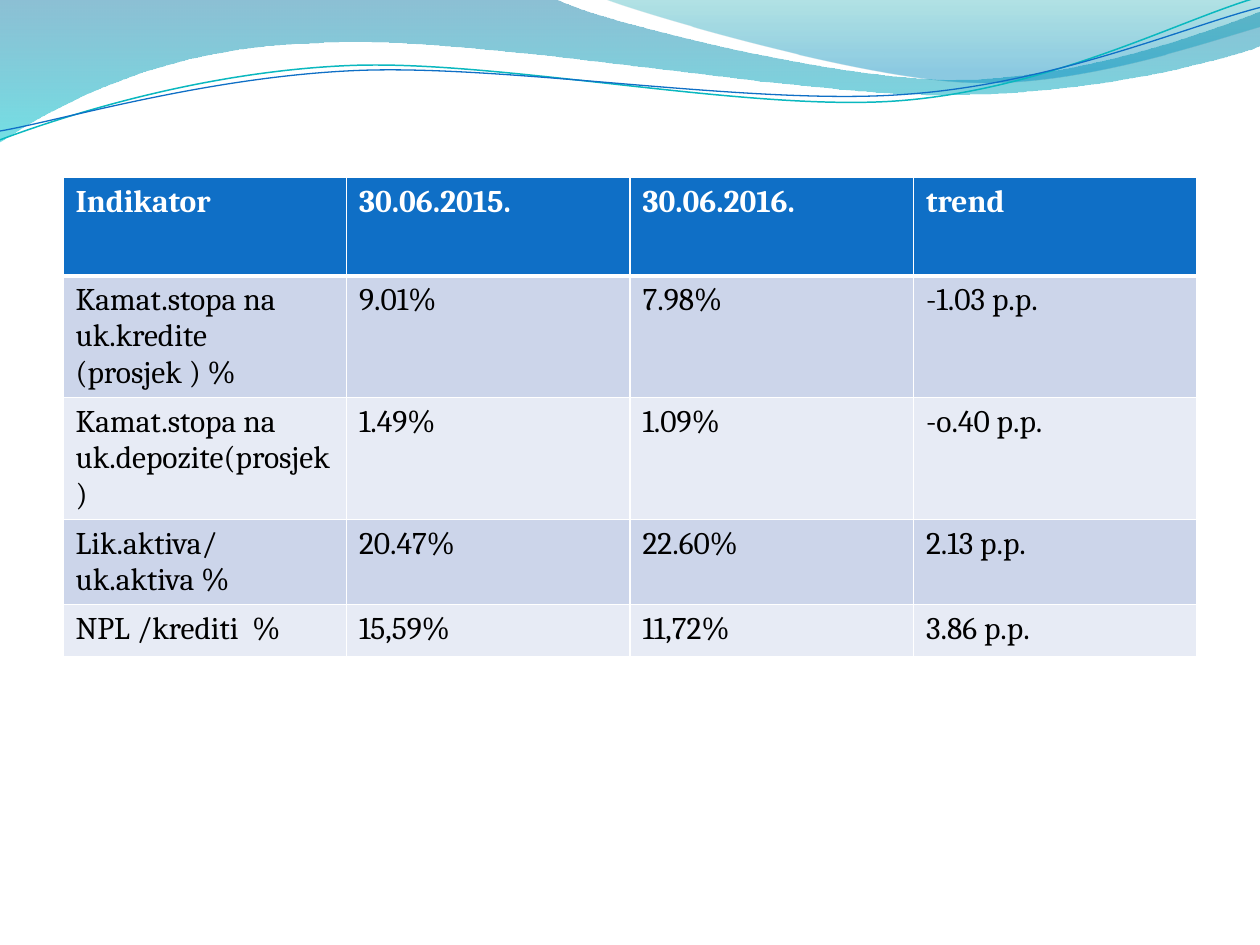
from math import cos, radians, sin

from lxml.etree import SubElement as Sub
from pptx import Presentation as Deck
from pptx.dml.color import RGBColor as RGB
from pptx.oxml.ns import qn
from pptx.util import Inches, Pt

WHITE = RGB(0xFF, 0xFF, 0xFF)
BLACK = RGB(0x00, 0x00, 0x00)
BLUE = RGB(0x0F, 0x6F, 0xC6)
TEAL = RGB(0x0A, 0xB8, 0xBF)
DEEP = RGB(0x00, 0x74, 0xA1)
AQUA = RGB(0x00, 0xC6, 0xCF)
GREEN = RGB(0x00, 0xA1, 0xA9)
SKY = RGB(0x00, 0x8B, 0xBF)
BANDS = RGB(0xCC, 0xD5, 0xEA), RGB(0xE7, 0xEB, 0xF5)

ROWS = [
    ("Indikator", "30.06.2015.", "30.06.2016.", "trend"),
    ("Kamat.stopa na uk.kredite (prosjek ) %", "9.01%", "7.98%", "-1.03 p.p."),
    ("Kamat.stopa na uk.depozite(prosjek)", "1.49%", "1.09%", "-o.40 p.p."),
    ("Lik.aktiva/uk.aktiva %", "20.47%", "22.60%", "2.13 p.p."),
    ("NPL /krediti  %", "15,59%", "11,72%", "3.86 p.p."),
]

WAVE = [
    (0, 0), (4.4, -0.01),
    (4.76, 0.17, 6.64, 0.63, 7.58, 0.63),
    (8.53, 0.63, 9.58, 0.26, 10, 0.09), (10.01, 0.36),
    (9.83, 0.44, 8.7, 0.76, 7.46, 0.75),
    (6.22, 0.75, 3.82, 0.28, 2.57, 0.34),
    (1.29, 0.36, 0.46, 0.83, -0.01, 1.13), (0, 0),
]
CREST = [
    (4.79, -0.01),
    (5.09, 0.11, 6.82, 0.62, 7.69, 0.65),
    (8.56, 0.69, 9.61, 0.32, 10, 0.21), (10, 0), (4.79, -0.01),
]
UPPER = [
    (0, 1.11),
    (0.48, 0.93, 1.58, 0.57, 2.77, 0.52),
    (3.95, 0.47, 5.93, 0.89, 7.13, 0.8),
    (8.33, 0.71, 9.38, 0.15, 9.98, -0.02),
]
LOWER = [
    (0, 1.04),
    (0.47, 0.96, 1.64, 0.61, 2.83, 0.56),
    (4.03, 0.51, 5.97, 0.84, 7.17, 0.75),
    (8.36, 0.67, 9.41, 0.21, 10, 0.06),
]
TILT = 2.7


def pairs(step):
    return list(zip(step[::2], step[1::2]))


def turn(step, mid):
    a = radians(TILT)
    spots = []
    for x, y in pairs(step):
        dx, dy = x - mid[0], y - mid[1]
        spots += [mid[0] + dx * cos(a) - dy * sin(a),
                  mid[1] + dx * sin(a) + dy * cos(a)]
    return tuple(spots)


class Page:
    text = {"name": "Cambria", "size": Pt(18)}

    def __init__(self, slide):
        self.slide = slide

    def outline(self, steps, close):
        first, *rest = [(Inches(x), Inches(y))
                        for step in steps for x, y in pairs(step)]
        pen = self.slide.shapes.build_freeform(*first, scale=1.0)
        pen.add_line_segments(rest, close=close)
        shape = pen.convert_to_shape()
        shape.shadow.inherit = False
        lines = iter(list(shape._element.iter(qn("a:lnTo"))))
        for step in steps[1:]:
            line = next(lines)
            if len(step) == 6:
                line.addprevious(bend := line.makeelement(qn("a:cubicBezTo")))
                for part in (line, next(lines), next(lines)):
                    bend.append(part[0])
                    part.getparent().remove(part)
        return shape

    def wash(self, steps, stops):
        shape = self.outline(steps, True)
        shape.line.fill.background()
        shape.fill.gradient()
        shape.fill.gradient_angle = 270
        for stop, (place, tint, alpha) in zip(shape.fill.gradient_stops, stops):
            stop.position = place
            stop.color.rgb = tint
        tints = list(shape._element.spPr.iter(qn("a:srgbClr")))
        for node, (place, tint, alpha) in zip(tints, stops):
            Sub(node, qn("a:alpha"), val=str(alpha * 1000))

    def curve(self, steps, mid, tint, width):
        shape = self.outline([turn(step, mid) for step in steps], False)
        shape.rotation = -TILT
        shape.fill.background()
        shape.line.color.rgb = tint
        shape.line.width = Pt(width)

    def border(self, cell):
        props = cell._tc.get_or_add_tcPr()
        for side, width in zip("LRTB", (1, 1, 1, 3)):
            line = Sub(props, qn(f"a:ln{side}"), w=str(Pt(width)))
            fill = Sub(line, qn("a:solidFill"))
            Sub(fill, qn("a:srgbClr"), val=str(WHITE))

    def table(self, rows, left, top, width, heights):
        frame = self.slide.shapes.add_table(
            len(rows), len(rows[0]), Inches(left), Inches(top),
            Inches(width), Inches(sum(heights)))
        grid = frame.table
        for r, (row, height) in enumerate(zip(rows, heights)):
            grid.rows[r].height = Inches(height)
            head = r == 0
            for c, words in enumerate(row):
                cell = grid.cell(r, c)
                if head:
                    self.border(cell)
                cell.fill.solid()
                cell.fill.fore_color.rgb = BLUE if head else BANDS[(r - 1) % 2]
                run = cell.text_frame.paragraphs[0].add_run()
                run.text = words
                for key, value in {**self.text, "bold": head}.items():
                    setattr(run.font, key, value)
                run.font.color.rgb = WHITE if head else BLACK


def main():
    deck = Deck()
    deck.slide_width, deck.slide_height = Inches(10), Inches(7.5)
    page = Page(deck.slides.add_slide(deck.slide_layouts[6]))
    page.wash(WAVE, [(0, DEEP, 45), (1, AQUA, 55)])
    page.wash(CREST, [(0, GREEN, 30), (0.8, SKY, 45)])
    page.curve(UPPER, (4.99, 0.58), TEAL, 0.85)
    page.curve(LOWER, (5, 0.59), BLUE, 0.75)
    page.table(ROWS, 0.5, 1.41, 9, [0.78] + [0.41] * 4)
    deck.save("out.pptx")


if __name__ == "__main__":
    main()
